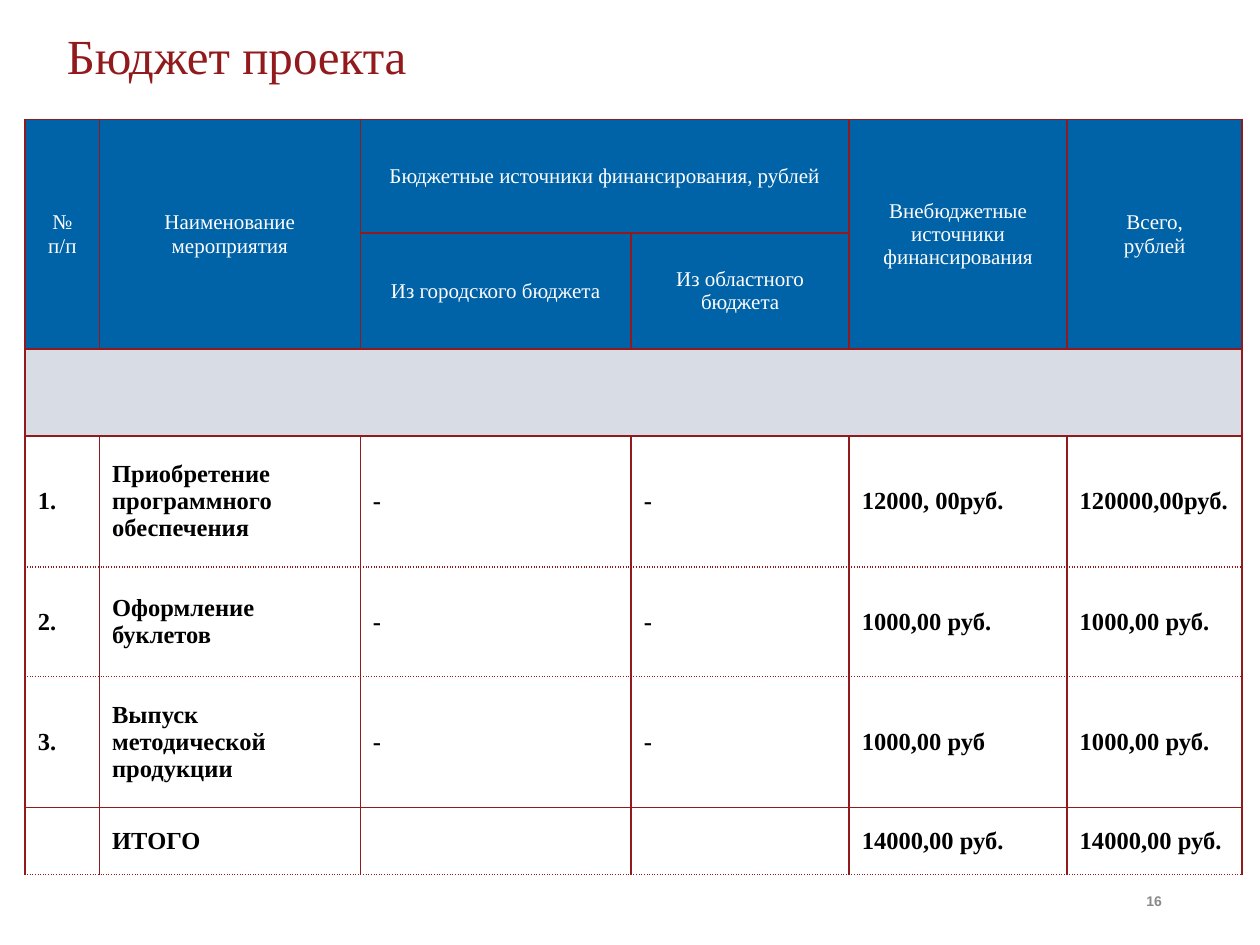
from lxml import etree
from pptx import Presentation
from pptx import util as u
from pptx.dml.color import RGBColor
from pptx.enum import text as t
from pptx.oxml.ns import qn

RED, BLUE, GREY, WHITE = "921A1D", "0062A7", "D8DCE5", "FFFFFF"
SERIF = "Times New Roman"
COLS = [0.59, 2.07, 2.15, 1.73, 1.73, 1.39]
ROWS = [0.9, 0.92, 0.69, 1.04, 0.87, 1.04, 0.53]
HEAD = [
    ["№\nп/п", "Наименование\nмероприятия",
     "Бюджетные источники финансирования, рублей", "",
     "Внебюджетные\nисточники\nфинансирования", "Всего,\nрублей"],
    ["", "", "Из городского бюджета", "Из областного бюджета", "", ""],
]
BODY = [
    ["1.", "Приобретение программного обеспечения", "-", "-",
     "12000, 00руб.", "120000,00руб."],
    ["2.", "Оформление буклетов", "-", "-", "1000,00 руб.", "1000,00 руб."],
    ["3.", "Выпуск методической продукции", "-", "-",
     "1000,00 руб", "1000,00 руб."],
    ["", "ИТОГО", "", "", "14000,00 руб.", "14000,00 руб."],
]
DATA = HEAD + [[""] * len(COLS)] + BODY
MERGES = [(0, 0, 1, 0), (0, 1, 1, 1), (0, 2, 0, 3),
          (0, 4, 1, 4), (0, 5, 1, 5), (2, 0, 2, 5)]
DOTTED = {4, 5, 7}


def paint(obj, color):
    obj.rgb = RGBColor.from_string(color)


def write(frame, words, size, color, face=SERIF, bold=False, align=t.PP_ALIGN.LEFT):
    frame.text = words
    for para in frame.paragraphs:
        para.alignment = align
        font = para.font
        font.size, font.name, font.bold = u.Pt(size), face, bold
        paint(font.color, color)


def place(shape, box):
    shape.left, shape.top, shape.width, shape.height = map(u.Inches, box)


def edge(cell, row):
    props = cell._tc.get_or_add_tcPr()
    dash = {"T": row in DOTTED, "B": row + 1 in DOTTED}
    for i, side in enumerate("LRTB"):
        line = etree.Element(qn("a:ln" + side), w=str(u.Pt(1)))
        fill = etree.SubElement(line, qn("a:solidFill"))
        etree.SubElement(fill, qn("a:srgbClr"), val=RED)
        kind = "sysDot" if dash.get(side) else "solid"
        etree.SubElement(line, qn("a:prstDash"), val=kind)
        props.insert(i, line)


def add_title(slide, box):
    title = slide.shapes.title
    place(title, box)
    frame = title.text_frame
    frame.word_wrap = True
    frame.vertical_anchor = t.MSO_ANCHOR.MIDDLE
    write(frame, "Бюджет проекта", 28, RED)
    frame.paragraphs[0].line_spacing = 0.9


def add_budget(slide, box):
    table = slide.shapes.add_table(len(ROWS), len(COLS), *map(u.Inches, box)).table
    table.first_row = table.horz_banding = False
    for col, width in zip(table.columns, COLS):
        col.width = u.Inches(width)
    for row, height in zip(table.rows, ROWS):
        row.height = u.Inches(height)
    for r, line in enumerate(DATA):
        head = r < len(HEAD)
        for c, words in enumerate(line):
            cell = table.cell(r, c)
            cell.vertical_anchor = t.MSO_ANCHOR.MIDDLE
            cell.fill.solid()
            paint(cell.fill.fore_color, BLUE if head else GREY if r == 2 else WHITE)
            edge(cell, r)
            if head:
                write(cell.text_frame, words, 12, WHITE, align=t.PP_ALIGN.CENTER)
            else:
                write(cell.text_frame, words, 14, "000000", bold=True)
    for top, left, low, right in MERGES:
        table.cell(top, left).merge(table.cell(low, right))


def add_number(slide, box):
    frame = slide.shapes.add_textbox(*map(u.Inches, box)).text_frame
    frame.word_wrap = True
    frame.vertical_anchor = t.MSO_ANCHOR.MIDDLE
    write(frame, "16", 8, "898989", "Arial", True, t.PP_ALIGN.RIGHT)


def main():
    deck = Presentation()
    deck.slide_width, deck.slide_height = u.Inches(10), u.Inches(7.5)
    slide = deck.slides.add_slide(deck.slide_layouts[5])
    add_number(slide, (7.07, 6.95, 2.25, 0.4))
    add_title(slide, (0.43, -0.03, 4.26, 0.99))
    add_budget(slide, (0.2, 0.95, sum(COLS), sum(ROWS)))
    deck.save("out.pptx")


if __name__ == "__main__":
    main()
